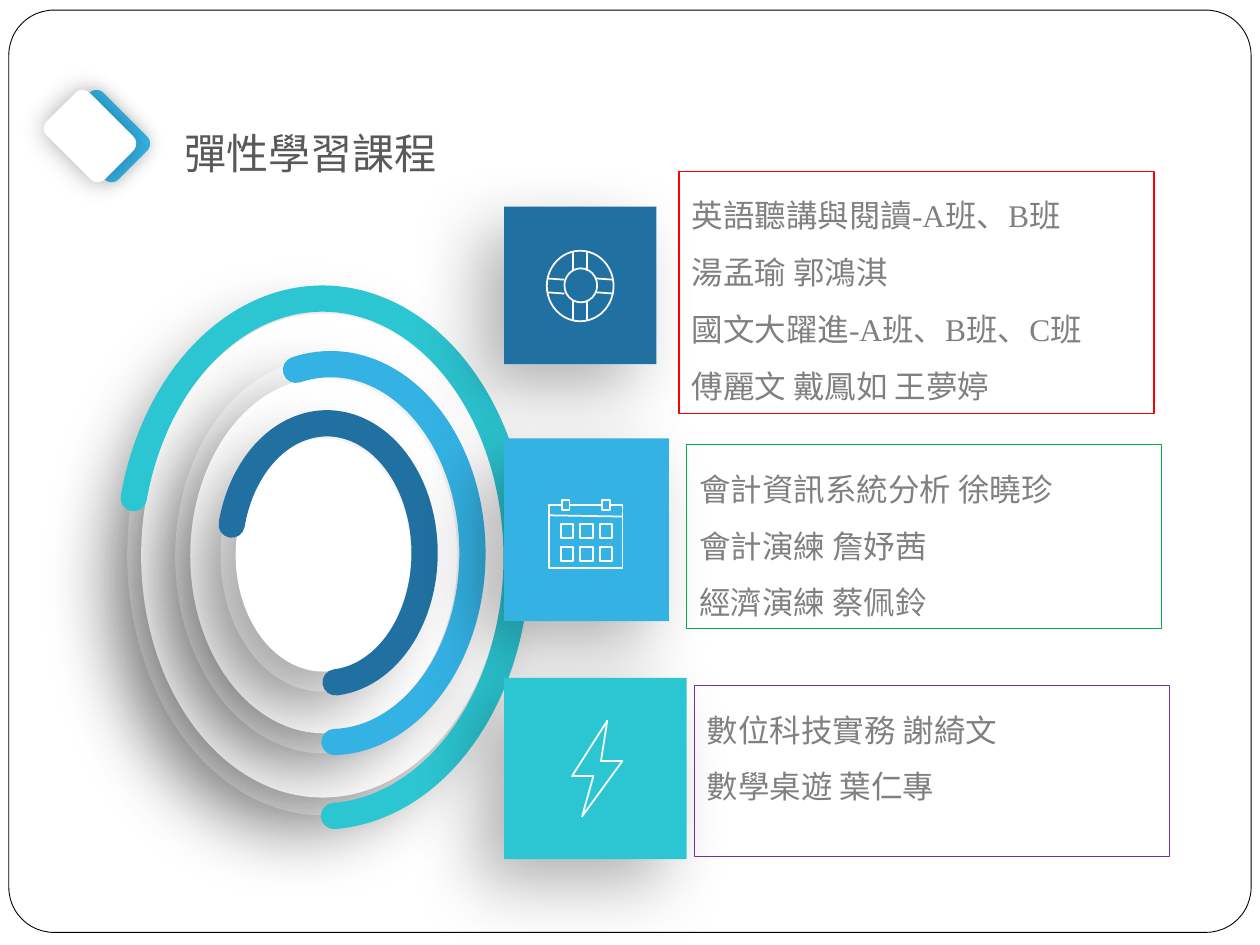
from itertools import product
from lxml import etree
from pptx import Presentation
from pptx.dml.color import RGBColor
from pptx.enum.shapes import MSO_CONNECTOR, MSO_SHAPE as Form
from pptx.enum.text import MSO_ANCHOR, PP_ALIGN
from pptx.oxml.ns import qn
from pptx.util import Inches, Pt

HUES = {"white": "FFFFFF", "black": "000000", "navy": "2070A1", "blue": "34B2E4",
        "teal": "2CC6D2", "red": "FF0000", "green": "00B050", "purple": "7030A0",
        "text": "808080", "title": "595959"}
FONT = "Times New Roman"


def hue(name):
    return RGBColor.from_string(HUES[name])


def add_alpha(node, share):
    etree.SubElement(node, qn("a:alpha"), val=str(share * 1000))


def paint(shape, fill=None, line=None, width=1):
    shape.shadow.inherit = False
    if fill:
        shape.fill.solid()
        shape.fill.fore_color.rgb = hue(fill)
    else:
        shape.fill.background()
    if line:
        shape.line.color.rgb = hue(line)
        shape.line.width = Pt(width)
    else:
        shape.line.fill.background()


def add_form(shapes, form, box, **look):
    shape = shapes.add_shape(form, *map(Inches, box))
    paint(shape, **look)
    return shape


def cast(shape, alpha=30, blur=40, dist=20, angle=135):
    """Give the shape a soft outer shadow."""
    effects = shape._element.spPr.find(qn("a:effectLst"))
    outer = etree.SubElement(effects, qn("a:outerShdw"), blurRad=str(Pt(blur)),
                             dist=str(Pt(dist)), dir=str(angle * 60000),
                             algn="ctr", rotWithShape="0")
    color = etree.SubElement(outer, qn("a:srgbClr"), val=HUES["black"])
    add_alpha(color, alpha)


def add_line(shapes, start, end):
    line = shapes.add_connector(MSO_CONNECTOR.STRAIGHT, *map(Inches, (*start, *end)))
    line.line.color.rgb = hue("white")
    line.line.width = Pt(1)
    etree.SubElement(line._element.spPr, qn("a:effectLst"))


def add_path(shapes, x, y, points, close=False):
    dots = [(Inches(x + dx), Inches(y + dy)) for dx, dy in points]
    pen = shapes.build_freeform(*dots[0])
    pen.add_line_segments(dots[1:], close=close)
    paint(pen.convert_to_shape(), line="white")


def add_text(shape, lines, size, color):
    frame = shape.text_frame
    frame.word_wrap = True
    frame.vertical_anchor = MSO_ANCHOR.TOP
    frame.text = "\n".join(lines)
    for para in frame.paragraphs:
        para.alignment = PP_ALIGN.LEFT
        para.line_spacing = 1.5
        for run in para.runs:
            run.font.size = Pt(size)
            run.font.name = FONT
            run.font.color.rgb = hue(color)


def draw_frame(shapes, box):
    frame = add_form(shapes, Form.ROUNDED_RECTANGLE, box,
                     fill="white", line="black", width=0.5)
    frame.adjustments[0] = 0.049


def draw_head(shapes, x, y, title):
    label = shapes.add_textbox(*map(Inches, (x + 0.98, y - 0.08, 3.06, 0.71)))
    add_text(label, [title], 24, "title")
    for dx, color, alpha, blur in ((0.11, "blue", 20, 10), (0, "white", 30, 15)):
        gem = add_form(shapes, Form.ROUNDED_RECTANGLE, (x + dx, y, 0.65, 0.48), fill=color)
        gem.rotation = 45
        cast(gem, alpha, blur, 0, 0)


def draw_rings(shapes, x, y):
    discs = [(0, 0, 3.1, 4.13), (0.11, 0.15, 2.88, 3.84),
             (0.38, 0.51, 2.35, 3.13), (0.5, 0.66, 2.12, 2.82),
             (0.74, 0.99, 1.62, 2.16), (0.86, 1.14, 1.39, 1.85)]
    for rank, (dx, dy, w, h) in enumerate(discs):
        disc = add_form(shapes, Form.OVAL, (x + dx, y + dy, w, h), fill="white")
        if rank % 2 == 0:
            add_alpha(disc._element.spPr.find(qn("a:solidFill"))[0], 65)
        cast(disc)
    arcs = [((0.01, 0.03, 3.08, 4.11), "teal", 197.45, 87.48),
            ((0.49, 0.55, 2.25, 3), "blue", 259.26, 88.87),
            ((0.81, 1.02, 1.55, 2.06), "navy", 196.61, 86.17)]
    for (dx, dy, w, h), color, start, end in arcs:
        arc = add_form(shapes, Form.ARC, (x + dx, y + dy, w, h), line=color, width=15)
        # Angles are kept in 60000ths of a degree, adjustments in 100000ths
        arc.adjustments[0] = start * 0.6
        arc.adjustments[1] = end * 0.6
        arc._element.spPr.find(qn("a:ln")).set("cap", "rnd")


def draw_buoy(shapes, x, y):
    for dx, dy, w, h in ((0, 0, 0.53, 0.56), (0.14, 0.14, 0.26, 0.27)):
        add_form(shapes, Form.OVAL, (x + dx, y + dy, w, h), line="white")
    for dx, dy in product((0.21, 0.32), (0, 0.4)):
        add_line(shapes, (x + dx, y + dy), (x + dx, y + dy + 0.16))
    for dx, dy in product((0, 0.39), (0.22, 0.33)):
        add_line(shapes, (x + dx, y + dy), (x + dx + 0.14, y + dy + 0.01))


def draw_dates(shapes, x, y):
    """Calendar icon."""
    add_line(shapes, (x + 0.16, y + 0.04), (x + 0.42, y + 0.04))
    add_path(shapes, x, y, [(0.1, 0.04), (0, 0.04), (0, 0.54),
                            (0.58, 0.54), (0.58, 0.04), (0.48, 0.04)])
    clips = [(dx, 0, 0.06, 0.08) for dx in (0.1, 0.42)]
    days = [(0.09 + 0.155 * col, 0.19 + 0.18 * row, 0.1, 0.11)
            for row, col in product(range(2), range(3))]
    for dx, dy, w, h in clips + days:
        add_form(shapes, Form.RECTANGLE, (x + dx, y + dy, w, h), line="white")
    add_line(shapes, (x, y + 0.12), (x + 0.58, y + 0.13))


def draw_bolt(shapes, x, y):
    add_path(shapes, x, y, [(0.28, 0), (0, 0.44), (0.17, 0.44), (0.08, 0.76),
                            (0.4, 0.32), (0.23, 0.32)], close=True)


def draw_tile(slide, box, color, icon, dx, dy):
    group = slide.shapes.add_group_shape().shapes
    cast(add_form(group, Form.RECTANGLE, box, fill=color))
    icon(group, box[0] + dx, box[1] + dy)


def draw_card(shapes, box, color, lines):
    card = add_form(shapes, Form.RECTANGLE, box, line=color, width=0.75)
    add_text(card, lines, 18, "text")


def main():
    deck = Presentation()
    deck.slide_width, deck.slide_height = Inches(10), Inches(7.5)
    slide = deck.slides.add_slide(deck.slide_layouts[6])
    shapes = slide.shapes

    draw_frame(shapes, (0.07, 0.08, 9.86, 7.32))
    draw_rings(shapes, 1.01, 2.34)
    draw_tile(slide, (4, 1.64, 1.21, 1.25), "navy", draw_buoy, 0.34, 0.35)
    draw_tile(slide, (4, 3.48, 1.31, 1.45), "blue", draw_dates, 0.36, 0.49)
    draw_tile(slide, (4, 5.38, 1.45, 1.44), "teal", draw_bolt, 0.54, 0.34)
    draw_card(shapes, (5.39, 1.36, 3.77, 1.92), "red",
              ["英語聽講與閱讀-A班、B班", "湯孟瑜 郭鴻淇",
               "國文大躍進-A班、B班、C班", "傅麗文 戴鳳如 王夢婷"])
    draw_card(shapes, (5.45, 3.53, 3.77, 1.46), "green",
              ["會計資訊系統分析 徐曉珍", "會計演練 詹妤茜", "經濟演練 蔡佩鈴"])
    draw_card(shapes, (5.51, 5.44, 3.77, 1.36), "purple",
              ["數位科技實務 謝綺文", "數學桌遊 葉仁專"])
    draw_head(shapes, 0.39, 0.84, "彈性學習課程")
    deck.save("out.pptx")


if __name__ == "__main__":
    main()
